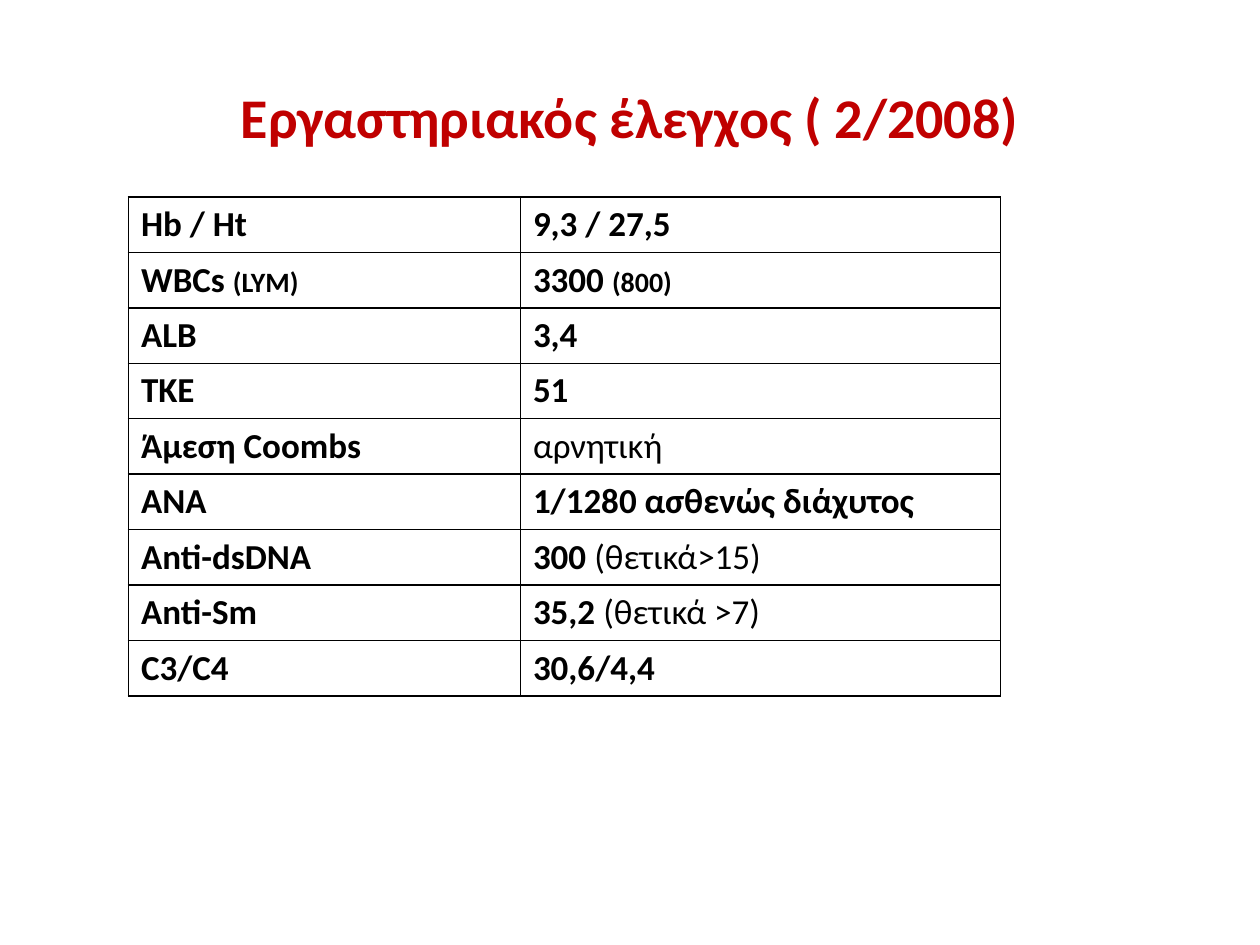
"""Build a slide with a table of laboratory results."""
from lxml.etree import SubElement
from pptx import Presentation
from pptx.dml.color import RGBColor
from pptx.enum.text import MSO_ANCHOR, PP_ALIGN
from pptx.oxml.ns import qn
from pptx.util import Pt

RED = RGBColor(0xC0, 0x00, 0x00)
BLACK = RGBColor(0x00, 0x00, 0x00)
FONT = "Calibri"
SMALL = {"size": 16}
PLAIN = {"bold": False}

HEADING = "Εργαστηριακός έλεγχος ( 2/2008)"
RESULTS = [
    ([("Hb / Ht", {})], [("9,3 / 27,5", {})]),
    ([("WBCs ", {}), ("(LYM)", SMALL)], [("3300 ", {}), ("(800)", SMALL)]),
    ([("ALB", {})], [("3,4", {})]),
    ([("TKE", {})], [("51", {})]),
    ([("Άμεση Coombs", {})], [("αρνητική", PLAIN)]),
    ([("ANA", {})], [("1/1280 ασθενώς διάχυτος", {})]),
    ([("Anti-dsDNA", {})], [("300 ", {}), ("(θετικά>15)", PLAIN)]),
    ([("Anti-Sm", {})], [("35,2 ", {}), ("(θετικά >7)", PLAIN)]),
    ([("C3/C4", {})], [("30,6/4,4", {})]),
]
COLUMN_WIDTHS = (224, 274.3)
ROW_HEIGHT = 31.7


def add_text(paragraph, text, size=20, bold=True, color=BLACK):
    run = paragraph.add_run()
    run.text = text
    run.font.name = FONT
    run.font.size = Pt(size)
    run.font.bold = bold
    run.font.color.rgb = color


def add_borders(cell):
    properties = cell._tc.get_or_add_tcPr()
    for side in ("a:lnL", "a:lnR", "a:lnT", "a:lnB"):
        border = SubElement(properties, qn(side), w=str(Pt(1)))
        fill = SubElement(border, qn("a:solidFill"))
        SubElement(fill, qn("a:srgbClr"), val=str(BLACK))


def add_heading(slide):
    frame = slide.shapes.add_textbox(Pt(36), Pt(21.6), Pt(648), Pt(90)).text_frame
    frame.word_wrap = True
    frame.vertical_anchor = MSO_ANCHOR.MIDDLE
    frame.paragraphs[0].alignment = PP_ALIGN.CENTER
    add_text(frame.paragraphs[0], HEADING, size=32, color=RED)


def add_results(slide):
    table = slide.shapes.add_table(
        len(RESULTS), len(COLUMN_WIDTHS), Pt(73.4), Pt(112.5),
        Pt(sum(COLUMN_WIDTHS)), Pt(ROW_HEIGHT * len(RESULTS))).table
    table.first_row = False
    table.horz_banding = False
    for column, width in zip(table.columns, COLUMN_WIDTHS):
        column.width = Pt(width)
    for row, result in zip(table.rows, RESULTS):
        row.height = Pt(ROW_HEIGHT)
        for cell, parts in zip(row.cells, result):
            add_borders(cell)
            cell.fill.background()
            for text, style in parts:
                add_text(cell.text_frame.paragraphs[0], text, **style)


def main():
    presentation = Presentation()
    presentation.slide_width = Pt(720)
    presentation.slide_height = Pt(540)
    slide = presentation.slides.add_slide(presentation.slide_layouts[6])
    add_heading(slide)
    add_results(slide)
    presentation.save("out.pptx")


if __name__ == "__main__":
    main()
